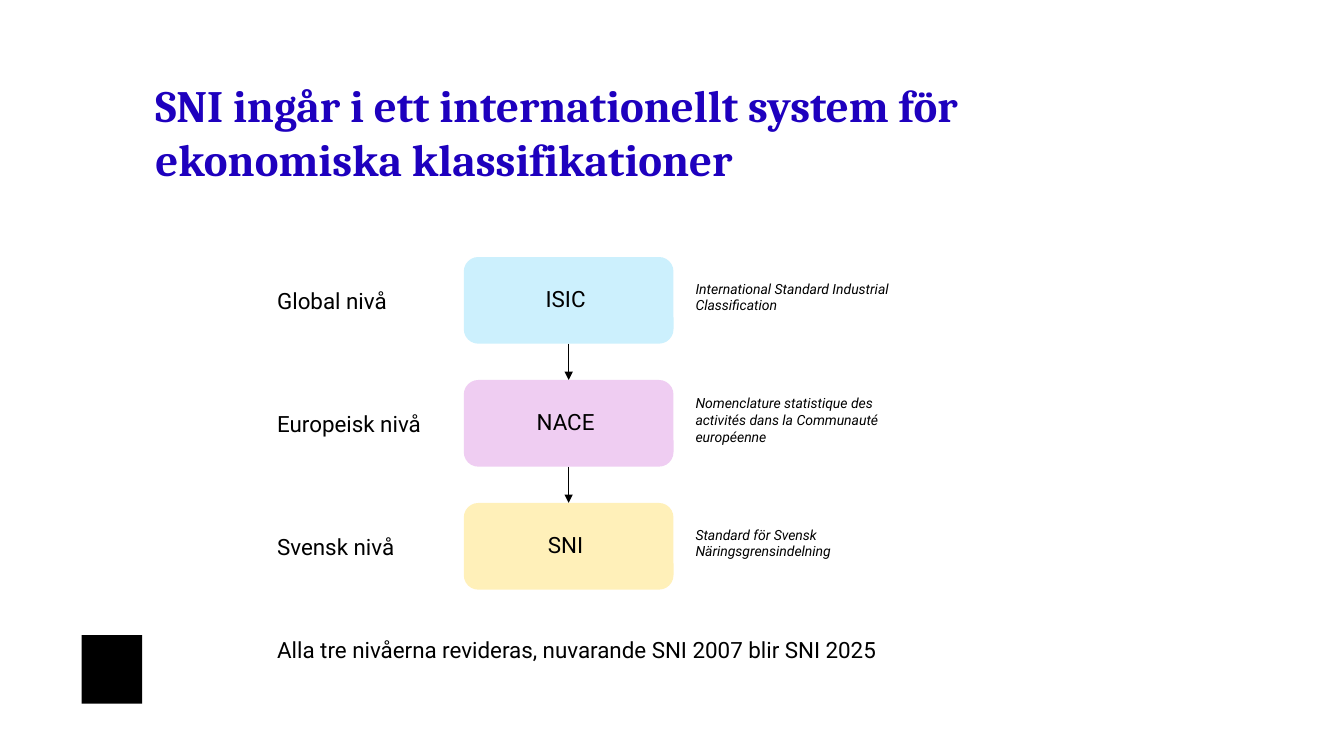
import pptx
import pptx.dml.color
import pptx.enum.shapes
import pptx.enum.text
import pptx.oxml
import pptx.oxml.ns
import pptx.util
from pptx.util import Inches

BLACK = pptx.dml.color.RGBColor(0x00, 0x00, 0x00)
TITLE_BLUE = pptx.dml.color.RGBColor(0x1E, 0x00, 0xBE)
GLOBAL_BLUE = pptx.dml.color.RGBColor(0xCC, 0xF0, 0xFD)
EUROPEAN_PINK = pptx.dml.color.RGBColor(0xEF, 0xCD, 0xF2)
SWEDISH_YELLOW = pptx.dml.color.RGBColor(0xFF, 0xF0, 0xB9)

LEVELS = [
    ("Global nivå", "ISIC", "International Standard Industrial Classification", GLOBAL_BLUE),
    ("Europeisk nivå", "NACE",
     "Nomenclature statistique des activités dans la Communauté européenne", EUROPEAN_PINK),
    ("Svensk nivå", "SNI", "Standard för Svensk Näringsgrensindelning", SWEDISH_YELLOW),
]
FIRST_TOP = 2.55
LEVEL_STEP = 1.22
BOX_LEFT, BOX_WIDTH, BOX_HEIGHT = 4.6, 2.08, 0.86
LABEL_LEFT = 2.65
TEXT_HEIGHT = 0.59

ALIGN = pptx.enum.text.PP_ALIGN
ANCHOR = pptx.enum.text.MSO_ANCHOR
SHAPE = pptx.enum.shapes.MSO_SHAPE


class SlideBuilder:
    body_font = "Roboto"
    title_font = "Cambria"
    body_size = 16
    note_size = 10
    title_size = 32

    def __init__(self, presentation):
        self.slide = presentation.slides.add_slide(presentation.slide_layouts[5])

    def styled_run(self, paragraph, text, font_name, size, color, bold=False, italic=False):
        run = paragraph.add_run()
        run.text = text
        run.font.name = font_name
        run.font.size = pptx.util.Pt(size)
        run.font.color.rgb = color
        run.font.bold = bold
        run.font.italic = italic

    def title(self, text, left, top, width, height):
        title = self.slide.shapes.title
        title.left, title.top = Inches(left), Inches(top)
        title.width, title.height = Inches(width), Inches(height)
        frame = title.text_frame
        frame.margin_left = frame.margin_right = frame.margin_top = frame.margin_bottom = 0
        frame.vertical_anchor = ANCHOR.TOP
        frame.auto_size = pptx.enum.text.MSO_AUTO_SIZE.NONE
        frame.word_wrap = True
        paragraph = frame.paragraphs[0]
        paragraph.alignment = ALIGN.LEFT
        paragraph.space_after = pptx.util.Pt(6)
        self.styled_run(paragraph, text, self.title_font, self.title_size, TITLE_BLUE, bold=True)

    def text(self, text, left, top, width, size=body_size, align=ALIGN.LEFT, italic=False):
        box = self.slide.shapes.add_textbox(
            Inches(left), Inches(top), Inches(width), Inches(TEXT_HEIGHT))
        frame = box.text_frame
        frame.word_wrap = True
        frame.vertical_anchor = ANCHOR.MIDDLE
        paragraph = frame.paragraphs[0]
        paragraph.alignment = align
        self.styled_run(paragraph, text, self.body_font, size, BLACK, italic=italic)

    def block(self, kind, left, top, width, height, color):
        shape = self.slide.shapes.add_shape(
            kind, Inches(left), Inches(top), Inches(width), Inches(height))
        shape.shadow.inherit = False
        shape.fill.solid()
        shape.fill.fore_color.rgb = color
        shape.line.fill.background()

    def arrow_down(self, x, top, bottom):
        arrow = self.slide.shapes.add_connector(
            pptx.enum.shapes.MSO_CONNECTOR.STRAIGHT,
            Inches(x), Inches(top), Inches(x), Inches(bottom))
        arrow.line.color.rgb = BLACK
        arrow.line.width = pptx.util.Pt(0.5)
        properties = arrow.element.spPr
        head = pptx.oxml.parse_xml(
            f'<a:tailEnd {pptx.oxml.ns.nsdecls("a")} type="triangle"/>')
        properties.find(pptx.oxml.ns.qn("a:ln")).append(head)
        properties.append(pptx.oxml.parse_xml(
            f'<a:effectLst {pptx.oxml.ns.nsdecls("a")}/>'))


def main():
    presentation = pptx.Presentation()
    presentation.slide_width = Inches(13.33)
    presentation.slide_height = Inches(7.5)
    builder = SlideBuilder(presentation)

    builder.title("SNI ingår i ett internationellt system för ekonomiska klassifikationer",
                  1.54, 0.77, 10.29, 0.99)
    builder.block(SHAPE.RECTANGLE, 0.81, 6.3, 0.6, 0.68, BLACK)

    for index, (level, name, meaning, color) in enumerate(LEVELS):
        top = FIRST_TOP + index * LEVEL_STEP
        builder.block(SHAPE.ROUNDED_RECTANGLE, BOX_LEFT, top, BOX_WIDTH, BOX_HEIGHT, color)
        builder.text(name, 4.3, top + 0.12, 2.62, align=ALIGN.CENTER)
        builder.text(level, LABEL_LEFT, top + 0.14, 1.75)
        builder.text(meaning, 6.8, top + 0.1, 2.38, size=builder.note_size, italic=True)
        if index < len(LEVELS) - 1:
            builder.arrow_down(BOX_LEFT + BOX_WIDTH / 2, top + BOX_HEIGHT, top + LEVEL_STEP)

    builder.text("Alla tre nivåerna revideras, nuvarande SNI 2007 blir SNI 2025",
                 LABEL_LEFT, 6.15, 6.71)
    presentation.save("out.pptx")


if __name__ == "__main__":
    main()
